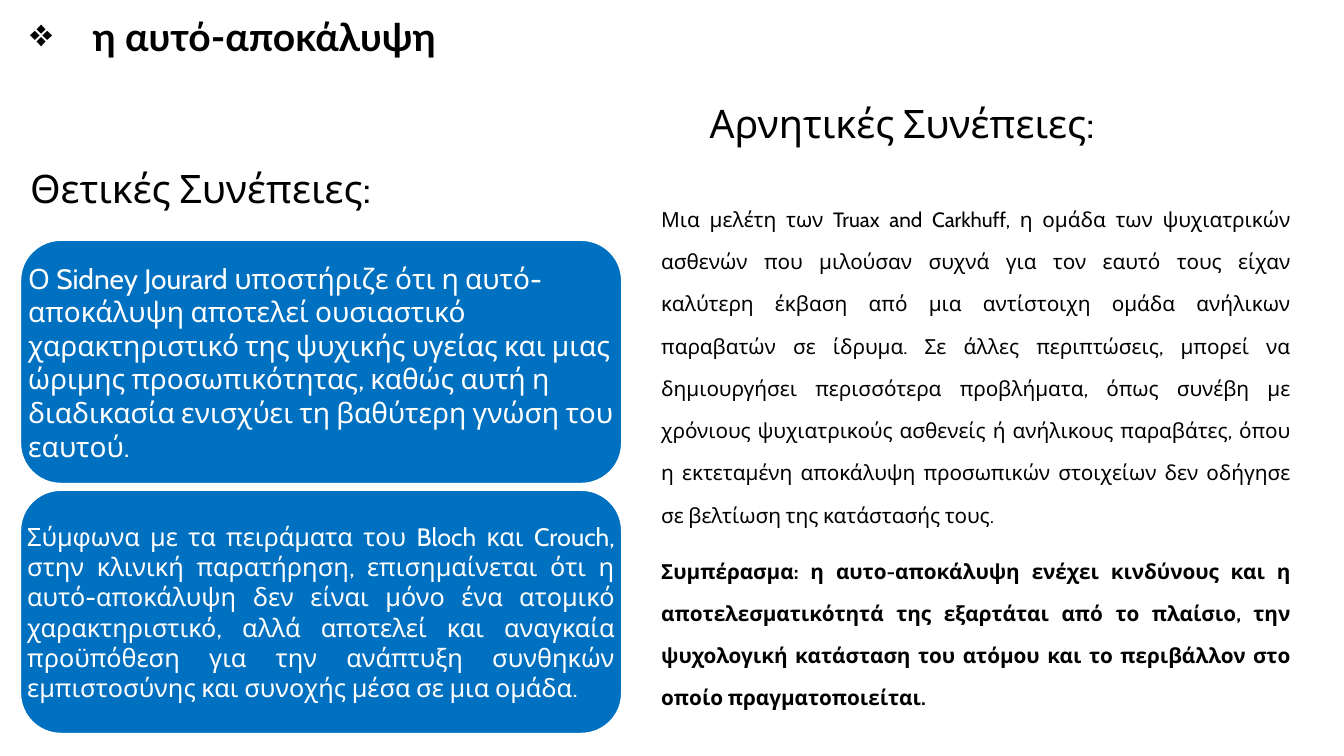
from dataclasses import dataclass

from lxml import etree
from pptx import Presentation
from pptx.dml.color import RGBColor
from pptx.enum import shapes, text
from pptx.oxml import ns
from pptx.util import Inches, Pt


@dataclass(frozen=True)
class Theme:
    black: RGBColor = RGBColor(0, 0, 0)
    white: RGBColor = RGBColor(255, 255, 255)
    blue: RGBColor = RGBColor(0, 0x70, 0xC0)
    title_font: str = "Lato"
    body_font: str = "Cabin"
    title_size: float = 27.9
    heading_size: float = 28
    body_size: float = 14.8


@dataclass(frozen=True)
class Box:
    left: float
    top: float
    width: float
    height: float

    def lengths(self) -> tuple:
        return tuple(map(Inches, (self.left, self.top, self.width, self.height)))


@dataclass(frozen=True)
class Heading:
    words: str
    box: Box


@dataclass(frozen=True)
class Card:
    words: str
    size: float
    inset: float
    align: text.PP_ALIGN


THEME = Theme()
LEFT, JUSTIFY = text.PP_ALIGN.LEFT, text.PP_ALIGN.JUSTIFY
TOP, MIDDLE, BOTTOM = text.MSO_ANCHOR.TOP, text.MSO_ANCHOR.MIDDLE, text.MSO_ANCHOR.BOTTOM

HEADINGS = (
    Heading("Θετικές Συνέπειες:", Box(0.2, 1.39, 5.7, 0.76)),
    Heading("Αρνητικές Συνέπειες:", Box(6.94, 0.75, 5.4, 0.76)),
)
FIRST_CARD = Box(0.2, 2.38, 5.97, 2.42)
CARD_STEP = 2.48
CARDS = (
    Card("Ο Sidney Jourard υποστήριζε ότι η αυτό-αποκάλυψη αποτελεί ουσιαστικό "
         "χαρακτηριστικό της ψυχικής υγείας και μιας ώριμης προσωπικότητας, καθώς αυτή η "
         "διαδικασία ενισχύει τη βαθύτερη γνώση του εαυτού.", 20, 0.08, LEFT),
    Card("Σύμφωνα με τα πειράματα του Bloch και Crouch, στην κλινική παρατήρηση, "
         "επισημαίνεται ότι η αυτό-αποκάλυψη δεν είναι μόνο ένα ατομικό χαρακτηριστικό, "
         "αλλά αποτελεί και αναγκαία προϋπόθεση για την ανάπτυξη συνθηκών εμπιστοσύνης "
         "και συνοχής μέσα σε μια ομάδα.", 18, 0.07, JUSTIFY),
)
STUDY = (
    "Μια μελέτη των Truax and Carkhuff, η ομάδα των ψυχιατρικών ασθενών που μιλούσαν "
    "συχνά για τον εαυτό τους είχαν καλύτερη έκβαση από μια αντίστοιχη ομάδα ανήλικων "
    "παραβατών σε ίδρυμα. Σε άλλες περιπτώσεις, μπορεί να δημιουργήσει περισσότερα "
    "προβλήματα, όπως συνέβη με χρόνιους ψυχιατρικούς ασθενείς ή ανήλικους παραβάτες, "
    "όπου η εκτεταμένη αποκάλυψη προσωπικών στοιχείων δεν οδήγησε σε βελτίωση της "
    "κατάστασής τους."
)
CONCLUSION = (
    "Συμπέρασμα: η αυτο-αποκάλυψη ενέχει κινδύνους και η αποτελεσματικότητά της "
    "εξαρτάται από το πλαίσιο, την ψυχολογική κατάσταση του ατόμου και το περιβάλλον "
    "στο οποίο πραγματοποιείται."
)


def add_frame(slide, box: Box, *, anchor=TOP, inset_x: float = 0.1, inset_y: float = 0.05):
    frame = slide.shapes.add_textbox(*box.lengths()).text_frame
    frame.word_wrap = True
    frame.vertical_anchor = anchor
    frame.margin_left = frame.margin_right = Inches(inset_x)
    frame.margin_top = frame.margin_bottom = Inches(inset_y)
    return frame


def write(frame, words: str, *, size: float, color=THEME.black, font: str = THEME.body_font,
          bold: bool = False, align=LEFT, line_spacing: float = 1.0, before: float = 0):
    """Fill the empty first paragraph, or append a new one."""
    paragraph = frame.paragraphs[0] if not frame.text else frame.add_paragraph()
    paragraph.alignment = align
    paragraph.line_spacing = line_spacing
    paragraph.space_before = Pt(before)
    run = paragraph.add_run()
    run.text = words
    run.font.size, run.font.name, run.font.bold = Pt(size), font, bold
    run.font.color.rgb = color
    return paragraph


def add_bullet(paragraph, symbol: str, indent: float) -> None:
    properties = paragraph._p.get_or_add_pPr()
    properties.set("marL", str(Inches(indent)))
    properties.set("indent", str(-Inches(indent)))
    etree.SubElement(properties, ns.qn("a:buChar")).set("char", symbol)


def add_card(slide, card: Card, box: Box) -> None:
    shape = slide.shapes.add_shape(shapes.MSO_SHAPE.ROUNDED_RECTANGLE, *box.lengths())
    shape.shadow.inherit = False
    shape.fill.solid()
    shape.fill.fore_color.rgb = THEME.blue
    shape.line.color.rgb = THEME.white
    shape.line.width = Pt(1.5)
    frame = add_frame(slide, box, anchor=MIDDLE, inset_x=card.inset, inset_y=card.inset)
    write(frame, card.words, size=card.size, color=THEME.white, align=card.align)


def main() -> None:
    presentation = Presentation()
    presentation.slide_width, presentation.slide_height = Inches(13.33), Inches(7.5)
    slide = presentation.slides.add_slide(presentation.slide_layouts[6])

    title = add_frame(slide, Box(0.2, 0.18, 11.91, 1.03), inset_y=0)
    add_bullet(write(title, "η αυτό-αποκάλυψη", size=THEME.title_size, font=THEME.title_font,
                     bold=True, line_spacing=0.9), "❖", 0.62)

    for heading in HEADINGS:
        write(add_frame(slide, heading.box, anchor=BOTTOM), heading.words,
              size=THEME.heading_size, line_spacing=0.9, before=10)

    for index, card in enumerate(CARDS):
        add_card(slide, card, Box(FIRST_CARD.left, FIRST_CARD.top + index * CARD_STEP,
                                  FIRST_CARD.width, FIRST_CARD.height))

    findings = add_frame(slide, Box(6.46, 1.83, 6.44, 5.44))
    for words, bold in ((STUDY, False), (CONCLUSION, True)):
        write(findings, words, size=THEME.body_size, bold=bold, align=JUSTIFY,
              line_spacing=1.7, before=10)

    presentation.save("out.pptx")


if __name__ == "__main__":
    main()
